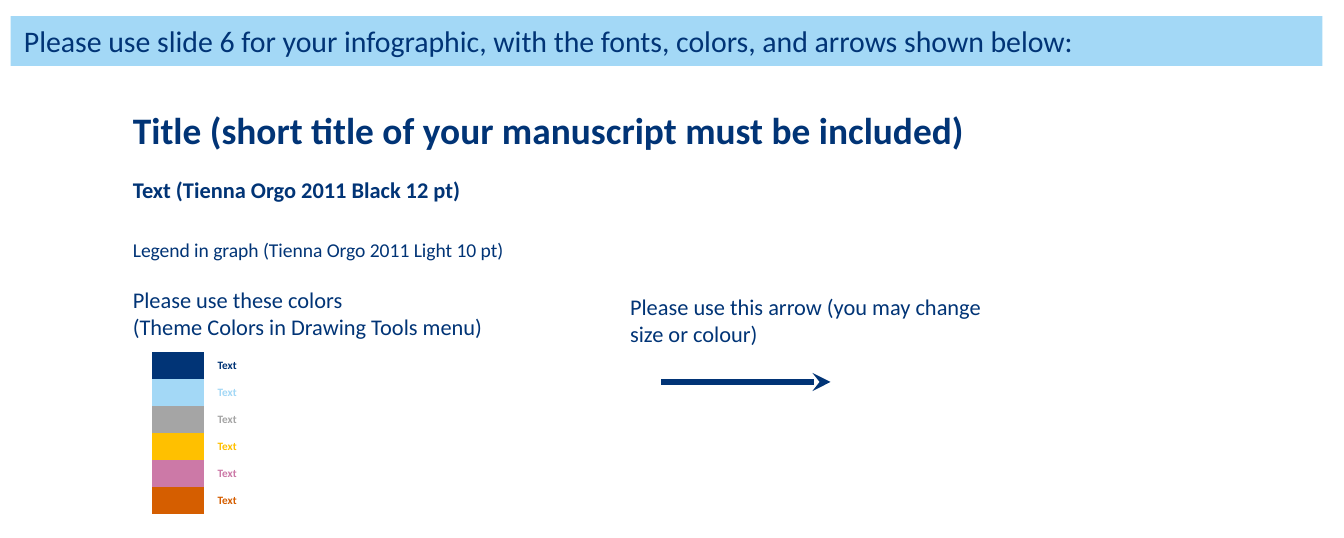
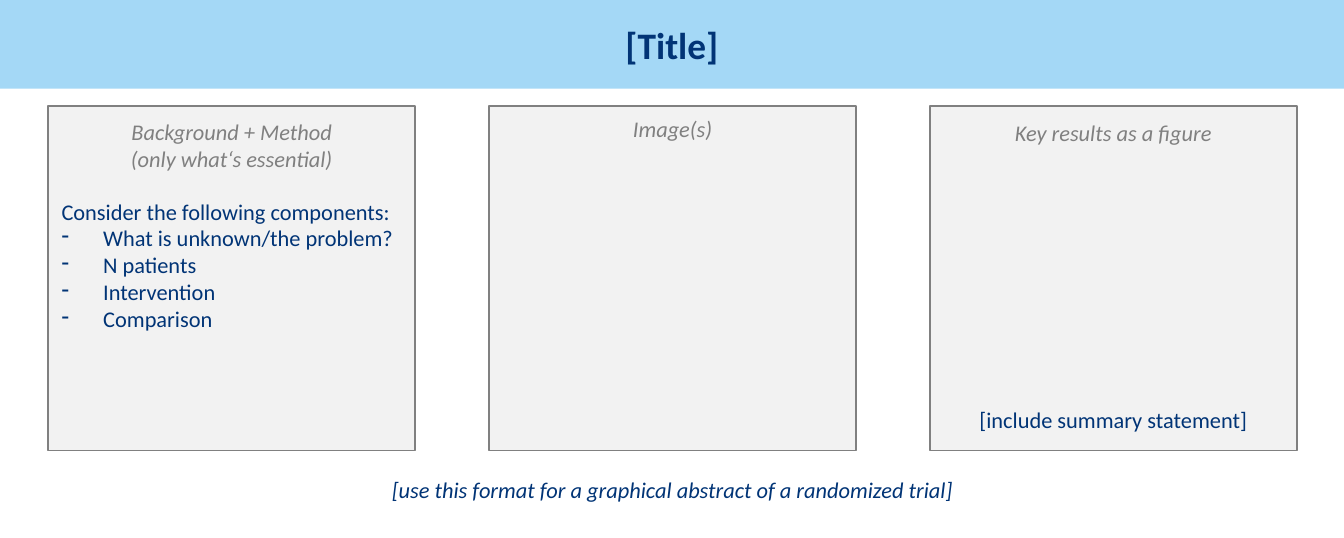
from dataclasses import dataclass

from lxml.etree import SubElement
from pptx import Presentation
from pptx.dml.color import RGBColor
from pptx.enum.shapes import MSO_CONNECTOR, MSO_SHAPE
from pptx.enum.text import MSO_ANCHOR, PP_ALIGN
from pptx.oxml.ns import qn
from pptx.util import Emu, Pt

PX = 9144
FONT = "Calibri"
NO_TABLE_STYLE = "{2D5ABB26-0587-4C30-8999-92F81FD0307C}"
COLORS = {
    "navy": "013476",
    "sky": "A3D8F6",
    "title_sky": "A4D8F6",
    "silver": "A5A5A5",
    "amber": "FFC000",
    "pink": "CC79A7",
    "orange": "D55E00",
    "panel": "F2F2F2",
    "grey": "808080",
}
PALETTE = ("navy", "sky", "silver", "amber", "pink", "orange")


@dataclass(frozen=True)
class Box:
    left: int
    top: int
    width: int
    height: int

    def emu(self) -> tuple:
        return tuple(px(n) for n in (self.left, self.top, self.width, self.height))


@dataclass(frozen=True)
class Sample:
    text: str
    box: Box
    size: float = 12
    bold: bool = False


@dataclass(frozen=True)
class Panel:
    heading: str
    heading_top: int
    heading_height: int = 30


SAMPLES = (
    Sample("Please use these colors\v(Theme Colors in Drawing Tools menu)", Box(89, 208, 316, 50)),
    Sample("Title (short title of your manuscript must be included)", Box(89, 75, 862, 44), 20, True),
    Sample("Text (Tienna Orgo 2011 Black 12 pt)", Box(89, 126, 769, 30), bold=True),
    Sample("Legend in graph (Tienna Orgo 2011 Light 10 pt)", Box(89, 172, 582, 29), 10.5),
    Sample("Please use this arrow (you may change size or colour)", Box(459, 213, 306, 50)),
)
PANELS = (
    Panel("Background + Method\n(only what‘s essential)", 83, 50),
    Panel("Image(s)", 81),
    Panel("Key results as a figure", 84),
)
PANEL_LEFT, PANEL_TOP, PANEL_WIDTH, PANEL_HEIGHT = 36, 79, 273, 256
PANEL_STEP = 328


def px(length: int) -> Emu:
    return Emu(length * PX)


def rgb(color: str) -> RGBColor:
    return RGBColor.from_string(COLORS[color])


def write(frame, text: str, *, size: float = 12, color: str = "navy", bold: bool = False,
          italic: bool = False, align=PP_ALIGN.LEFT, anchor=MSO_ANCHOR.TOP,
          bullets: bool = False) -> None:
    frame.word_wrap = True
    frame.vertical_anchor = anchor
    frame.text = text
    for index, paragraph in enumerate(frame.paragraphs):
        paragraph.alignment = align
        if bullets and index:
            add_dash(paragraph)
        for run in paragraph.runs:
            font = run.font
            font.name, font.size = FONT, Pt(size)
            font.bold, font.italic = bold, italic
            font.color.rgb = rgb(color)


def add_dash(paragraph) -> None:
    properties = paragraph._p.get_or_add_pPr()
    indent = px(31)
    properties.set("marL", str(indent))
    properties.set("indent", str(-indent))
    SubElement(properties, qn("a:buChar")).set("char", "-")


def add_text(slide, box: Box, text: str, **style) -> None:
    write(slide.shapes.add_textbox(*box.emu()).text_frame, text, **style)


def add_rect(slide, box: Box, fill: str, line: str = ""):
    rect = slide.shapes.add_shape(MSO_SHAPE.RECTANGLE, *box.emu())
    rect.shadow.inherit = False
    rect.fill.solid()
    rect.fill.fore_color.rgb = rgb(fill)
    if line:
        rect.line.color.rgb = rgb(line)
        rect.line.width = Pt(1)
    else:
        rect.line.fill.background()
    return rect


def add_arrow(slide, left: int, right: int, y: int) -> None:
    arrow = slide.shapes.add_connector(MSO_CONNECTOR.STRAIGHT, px(left), px(y), px(right), px(y))
    arrow.line.color.rgb = rgb("navy")
    arrow.line.width = Pt(3.25)
    SubElement(arrow.line._get_or_add_ln(), qn("a:tailEnd")).set("type", "stealth")
    SubElement(arrow._element.spPr, qn("a:effectLst"))


def add_palette(slide, left: int, top: int, column: int, row: int) -> None:
    box = Box(left, top, 2 * column, row * len(PALETTE))
    table = slide.shapes.add_table(len(PALETTE), 2, *box.emu()).table
    table.first_row = table.horz_banding = False
    table._tbl.tblPr.find(qn("a:tableStyleId")).text = NO_TABLE_STYLE
    for index, color in enumerate(PALETTE):
        swatch, label = table.cell(index, 0), table.cell(index, 1)
        for cell in (swatch, label):
            cell.margin_top = cell.margin_bottom = 0
            cell.vertical_anchor = MSO_ANCHOR.MIDDLE
        swatch.fill.solid()
        swatch.fill.fore_color.rgb = rgb(color)
        SubElement(swatch.text_frame.paragraphs[0]._p, qn("a:endParaRPr")).set("sz", "600")
        label.fill.background()
        write(label.text_frame, "Text", size=6, color=color, bold=True)
        label.vertical_anchor = MSO_ANCHOR.MIDDLE


def build_guide(slide) -> None:
    for sample in SAMPLES:
        add_text(slide, sample.box, sample.text, size=sample.size, bold=sample.bold)
    add_arrow(slide, 492, 618, 284)
    banner = add_rect(slide, Box(8, 12, 976, 37), "sky")
    write(banner.text_frame,
          "Please use slide 6 for your infographic, with the fonts, colors, and arrows shown below:",
          size=16)
    add_palette(slide, 113, 262, 39, 20)


def build_template(slide) -> None:
    title = add_rect(slide, Box(0, 0, 1000, 66), "title_sky")
    write(title.text_frame, "[Title]", size=20, bold=True,
          align=PP_ALIGN.CENTER, anchor=MSO_ANCHOR.MIDDLE)
    for index, panel in enumerate(PANELS):
        left = PANEL_LEFT + index * PANEL_STEP
        add_rect(slide, Box(left, PANEL_TOP, PANEL_WIDTH, PANEL_HEIGHT), "panel", "grey")
        add_text(slide, Box(left, panel.heading_top, PANEL_WIDTH, panel.heading_height),
                 panel.heading, color="grey", italic=True, align=PP_ALIGN.CENTER)
    add_text(slide, Box(111, 349, 779, 30),
             "[use this format for a graphical abstract of a randomized trial]",
             italic=True, align=PP_ALIGN.CENTER)
    add_text(slide, Box(PANEL_LEFT, 142, PANEL_WIDTH, 151),
             "Consider the following components:\nWhat is unknown/the problem?\n"
             "N patients\nIntervention\nComparison", bullets=True)
    add_text(slide, Box(PANEL_LEFT + 2 * PANEL_STEP, 297, PANEL_WIDTH, 30),
             "[include summary statement]", align=PP_ALIGN.CENTER)


def main() -> None:
    deck = Presentation()
    deck.slide_width, deck.slide_height = px(1000), px(400)
    blank = deck.slide_layouts[6]
    for build in (build_guide, build_template):
        build(deck.slides.add_slide(blank))
    deck.save("out.pptx")


if __name__ == "__main__":
    main()
